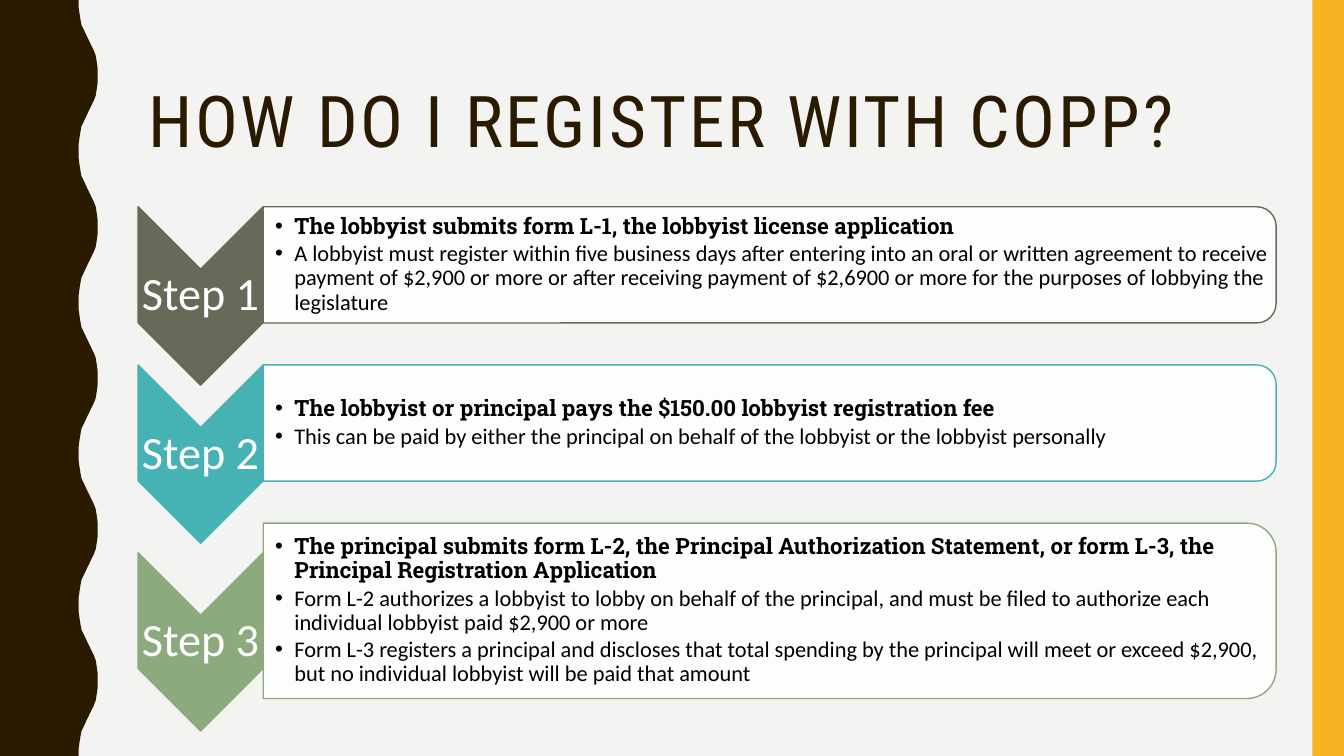
from lxml.etree import SubElement
from pptx import Presentation
from pptx.dml.color import RGBColor
from pptx.enum.shapes import MSO_SHAPE
from pptx.enum.text import MSO_ANCHOR, MSO_AUTO_SIZE, PP_ALIGN
from pptx.oxml.ns import qn
from pptx.util import Pt

# Content
TITLE = "HOW DO I REGISTER WITH COPP?"
STEPS = [
    {"label": "Step 1", "color": "olive", "height": 83, "lines": [
        "The lobbyist submits form L-1, the lobbyist license application",
        "A lobbyist must register within five business days after entering into an oral or "
        "written agreement to receive payment of $2,900 or more or after receiving payment of "
        "$2,6900 or more for the purposes of lobbying the legislature"]},
    {"label": "Step 2", "color": "teal", "height": 83, "lines": [
        "The lobbyist or principal pays the $150.00 lobbyist registration fee",
        "This can be paid by either the principal on behalf of the lobbyist or the lobbyist "
        "personally"]},
    {"label": "Step 3", "color": "green", "height": 125.3, "lines": [
        "The principal submits form L-2, the Principal Authorization Statement, or form L-3, "
        "the Principal Registration Application",
        "Form L-2 authorizes a lobbyist to lobby on behalf of the principal, and must be filed "
        "to authorize each individual lobbyist paid $2,900 or more",
        "Form L-3 registers a principal and discloses that total spending by the principal will "
        "meet or exceed $2,900, but no individual lobbyist will be paid that amount"]},
]
COLORS = {"background": "F3F3F2", "brown": "2A1A00", "gold": "F8B323", "white": "FFFFFF",
          "black": "000000", "olive": "656A59", "teal": "46B2B5", "green": "8CAA7E"}

# Layout in points
SLIDE_WIDTH, SLIDE_HEIGHT = 960, 540
CHEVRON_LEFT, CHEVRON_WIDTH, CHEVRON_HEIGHT = 98.6, 89.3, 127.4
PANEL_LEFT, PANEL_WIDTH = 188, 723.5
FIRST_TOP, ROW_GAP = 147.7, 30
BODY_HEIGHT = 83  # chevron side length, without its point
BULLET_INDENT = 13.7
CORNER_INSET = 0.049  # share of panel height kept clear of the round corners
WAVE_PERIOD, WAVE_COUNT = 108, 5
HALF_WAVE = [(56.2, 0), (56.2, 5), (56.9, 10), (57.6, 14.4), (58.3, 18), (59.8, 21),
             (61.2, 24), (62.6, 27), (64.1, 30), (65.5, 33), (67, 36), (68.4, 39.6),
             (69.1, 44), (69.8, 49), (69.8, 54)]


def color(name):
    return RGBColor.from_string(COLORS[name])


def paint(shape, fill, line=None):
    shape.shadow.inherit = False
    shape.fill.solid()
    shape.fill.fore_color.rgb = color(fill)
    if line:
        shape.line.color.rgb = color(line)
        shape.line.width = Pt(1)
    else:
        shape.line.fill.background()


def add_turned(slide, kind, left, top, width, height, fill, line):
    """Add a shape turned by 90 degrees that covers the given box."""
    shape = slide.shapes.add_shape(kind, Pt(left + (width - height) / 2),
                                   Pt(top + (height - width) / 2), Pt(height), Pt(width))
    shape.rotation = 90
    paint(shape, fill, line)
    return shape


def add_text(slide, lines, left, top, width, height, insets):
    box = slide.shapes.add_textbox(Pt(left), Pt(top), Pt(width), Pt(height))
    frame = box.text_frame
    frame.word_wrap = True
    frame.vertical_anchor = MSO_ANCHOR.MIDDLE
    frame.margin_left, frame.margin_top, frame.margin_right, frame.margin_bottom = map(Pt, insets)
    frame.text = "\n".join(lines)
    return frame


def format_paragraph(paragraph, font_name, size, color_name, bold=False):
    paragraph.line_spacing = 0.9
    for run in paragraph.runs:
        run.font.name = font_name
        run.font.size = Pt(size)
        run.font.bold = bold
        run.font.color.rgb = color(color_name)


def add_bullet(paragraph):
    paragraph.space_after = Pt(2.4)
    properties = paragraph._p.get_or_add_pPr()
    properties.set("marL", str(Pt(BULLET_INDENT)))
    properties.set("indent", str(-Pt(BULLET_INDENT)))
    SubElement(properties, qn("a:buFont"), typeface="Arial")
    SubElement(properties, qn("a:buChar"), char="•")


def add_wave_edge(slide):
    wave = HALF_WAVE + [(x, WAVE_PERIOD - y) for x, y in reversed(HALF_WAVE[:-1])]
    edge = [(Pt(x), Pt(y + WAVE_PERIOD * number))
            for number in range(WAVE_COUNT) for x, y in wave]
    builder = slide.shapes.build_freeform(0, 0)
    builder.add_line_segments(edge + [(0, Pt(SLIDE_HEIGHT))], close=True)
    paint(builder.convert_to_shape(), "brown")


def add_title(slide):
    title = slide.shapes.title
    title.left, title.top, title.width, title.height = Pt(98.6), Pt(30.2), Pt(801.4), Pt(117.4)
    frame = title.text_frame
    frame.text = TITLE
    frame.word_wrap = True
    frame.auto_size = MSO_AUTO_SIZE.NONE
    frame.vertical_anchor = MSO_ANCHOR.MIDDLE
    paragraph = frame.paragraphs[0]
    paragraph.alignment = PP_ALIGN.LEFT
    format_paragraph(paragraph, "Roboto Condensed", 51, "brown")
    paragraph.runs[0].font._element.set("spc", "200")


def add_step(slide, step, top):
    height = step["height"]

    # Chevron and its label
    chevron_top = top + (height - BODY_HEIGHT) / 2
    add_turned(slide, MSO_SHAPE.CHEVRON, CHEVRON_LEFT, chevron_top, CHEVRON_WIDTH,
               CHEVRON_HEIGHT, step["color"], step["color"])
    notch = CHEVRON_WIDTH / 2
    label = add_text(slide, [step["label"]], CHEVRON_LEFT, chevron_top + notch, CHEVRON_WIDTH,
                     CHEVRON_HEIGHT - 2 * notch, (1.5, 1.5, 1.5, 1.5))
    label.paragraphs[0].alignment = PP_ALIGN.CENTER
    format_paragraph(label.paragraphs[0], "Calibri", 33, "white")

    # Panel and its bullets
    panel = add_turned(slide, MSO_SHAPE.ROUND_2_SAME_RECTANGLE, PANEL_LEFT, top, PANEL_WIDTH,
                       height, "white", step["color"])
    fill_color = panel.fill._xPr.find(qn("a:solidFill"))[0]
    SubElement(fill_color, qn("a:alpha"), val="90000")
    inset = height * CORNER_INSET
    bullets = add_text(slide, step["lines"], PANEL_LEFT, top + inset, PANEL_WIDTH - inset,
                       height - 2 * inset, (8.6, 0.8, 0.8, 0.8))
    for index, paragraph in enumerate(bullets.paragraphs):
        is_heading = index == 0
        format_paragraph(paragraph, "Roboto Slab" if is_heading else "Calibri", 16, "black",
                         bold=is_heading)
        add_bullet(paragraph)


def main():
    presentation = Presentation()
    presentation.slide_width, presentation.slide_height = Pt(SLIDE_WIDTH), Pt(SLIDE_HEIGHT)
    slide = presentation.slides.add_slide(presentation.slide_layouts[5])
    slide.background.fill.solid()
    slide.background.fill.fore_color.rgb = color("background")

    # Side decoration
    add_wave_edge(slide)
    bar = slide.shapes.add_shape(MSO_SHAPE.RECTANGLE, Pt(937.5), 0, Pt(22.5), Pt(SLIDE_HEIGHT))
    paint(bar, "gold")

    add_title(slide)

    # Step rows
    top = FIRST_TOP
    for step in STEPS:
        add_step(slide, step, top)
        top += step["height"] + ROW_GAP

    presentation.save("out.pptx")


if __name__ == "__main__":
    main()
